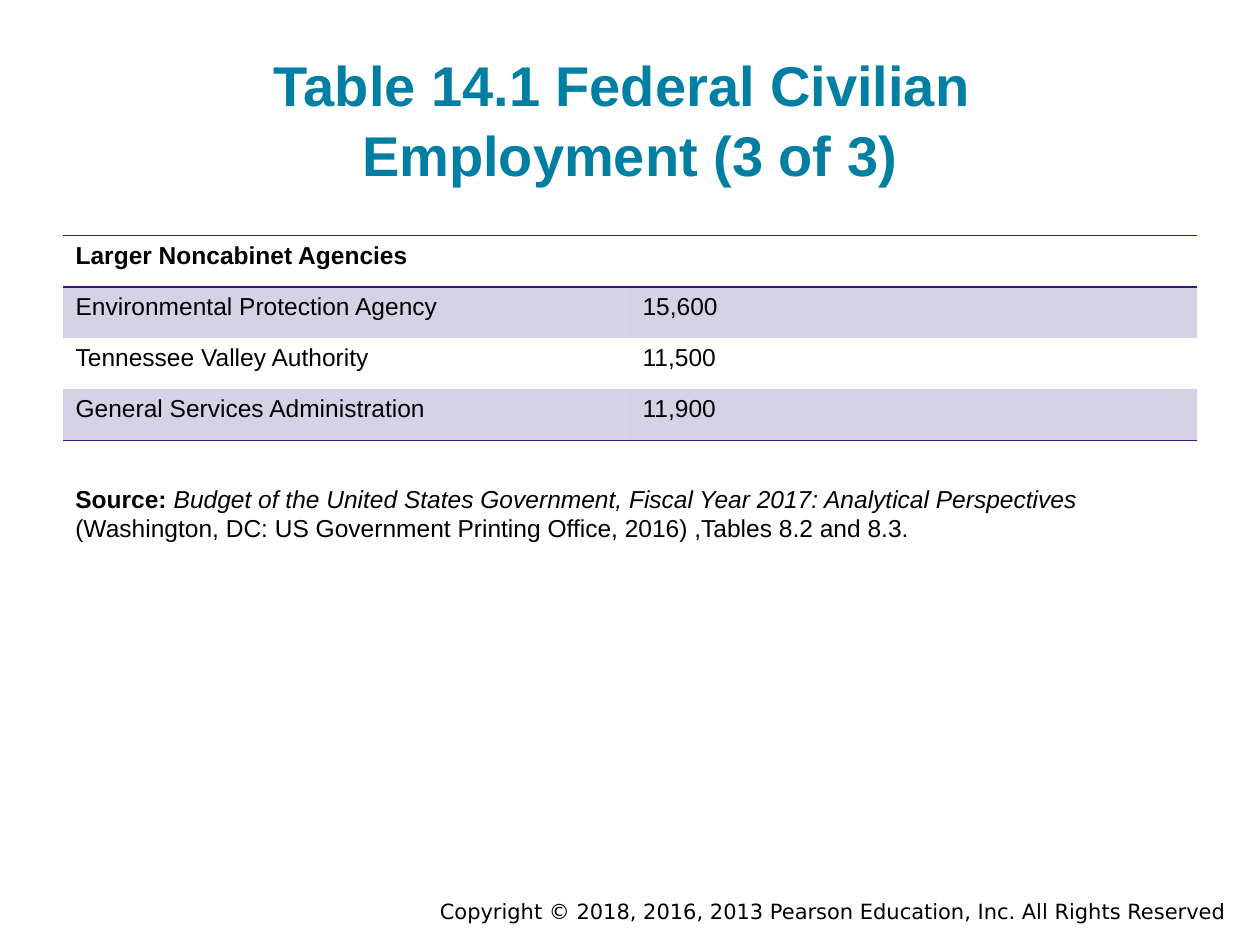
from lxml import etree
from pptx import Presentation
from pptx.dml.color import RGBColor
from pptx.enum.text import MSO_ANCHOR as Anchor, PP_ALIGN as Align
from pptx.oxml.ns import qn
from pptx.util import Cm, Pt

PURPLE, TEAL, BLACK = "3C1581", "007FA3", "000000"
NO_STYLE = "{2D5ABB26-0587-4C30-8999-92F81FD0307C}"
ROWS = [
    ("Larger Noncabinet Agencies", ""),
    ("Environmental Protection Agency", "15,600"),
    ("Tennessee Valley Authority", "11,500"),
    ("General Services Administration", "11,900"),
]


def rgb(value):
    return RGBColor.from_string(value)


def style(p, size, color=BLACK, name="Arial", bold=None):
    f = p.font
    f.size, f.name, f.bold = Pt(size), name, bold
    f.color.rgb = rgb(color)


def add_text(s, left, top, width, height, text=""):
    tf = s.shapes.add_textbox(Cm(left), Cm(top), Cm(width), Cm(height)).text_frame
    tf.word_wrap = True
    p = tf.paragraphs[0]
    p.text = text
    return tf, p


def fill_cell(cell, color, opacity):
    cell.fill.solid()
    cell.fill.fore_color.rgb = rgb(color)
    clr = cell._tc.tcPr.find(".//" + qn("a:srgbClr"))
    etree.SubElement(clr, qn("a:alpha"), val=str(opacity * 1000))


def set_borders(cell, sides, color):
    # Border lines come before the fill, in the order top, bottom
    tcPr = cell._tc.get_or_add_tcPr()
    for i, side in enumerate(sides):
        ln = etree.Element(qn("a:ln" + side), w=str(Pt(1)))
        solid = etree.SubElement(ln, qn("a:solidFill"))
        etree.SubElement(solid, qn("a:srgbClr"), val=color)
        tcPr.insert(i, ln)


def add_agency_table(s, left, top, width, height):
    frame = s.shapes.add_table(len(ROWS), 2, Cm(left), Cm(top), Cm(width), Cm(height))
    table = frame.table
    table.horz_banding = False
    table._tbl.tblPr.find(qn("a:tableStyleId")).text = NO_STYLE
    borders = {0: "TB", len(ROWS) - 1: "B"}
    for r, row in enumerate(ROWS):
        for c, text in enumerate(row):
            cell = table.cell(r, c)
            cell.text = text
            style(cell.text_frame.paragraphs[0], 14, bold=r == 0)
            if r % 2:
                fill_cell(cell, PURPLE, 20)
            set_borders(cell, borders.get(r, ""), PURPLE)


def main():
    prs = Presentation()
    prs.slide_width, prs.slide_height = Cm(25.4), Cm(19.05)
    s = prs.slides.add_slide(prs.slide_layouts[6])

    # Copyright line
    _, p = add_text(s, 5.08, 17.98, 19.89, 0.76,
                    "Copyright © 2018, 2016, 2013 Pearson Education, Inc. All Rights Reserved")
    p.alignment = Align.RIGHT
    style(p, 12, name="DejaVu Sans")

    # Title
    tf, p = add_text(s, 1.27, 0.99, 22.86, 3.05,
                     "Table 14.1 Federal Civilian \vEmployment (3 of 3)")
    tf.vertical_anchor = Anchor.BOTTOM
    tf.margin_top = tf.margin_bottom = Cm(0.25)
    p.alignment = Align.CENTER
    p.line_spacing = 1.04
    style(p, 32, TEAL, bold=True)

    # Agencies and their employment
    add_agency_table(s, 1.27, 4.75, 22.86, 4.13)

    # Source note
    _, p = add_text(s, 1.27, 9.63, 22.86, 1.45)
    style(p, 14)
    for text, bold, italic in [
        ("Source: ", True, False),
        ("Budget of the United States Government, Fiscal Year 2017: "
         "Analytical Perspectives ", False, True),
        ("(Washington, DC: US Government Printing Office, 2016) ,"
         "Tables 8.2 and 8.3.", False, False),
    ]:
        r = p.add_run()
        r.text = text
        r.font.bold, r.font.italic = bold, italic

    prs.save("out.pptx")


if __name__ == "__main__":
    main()
